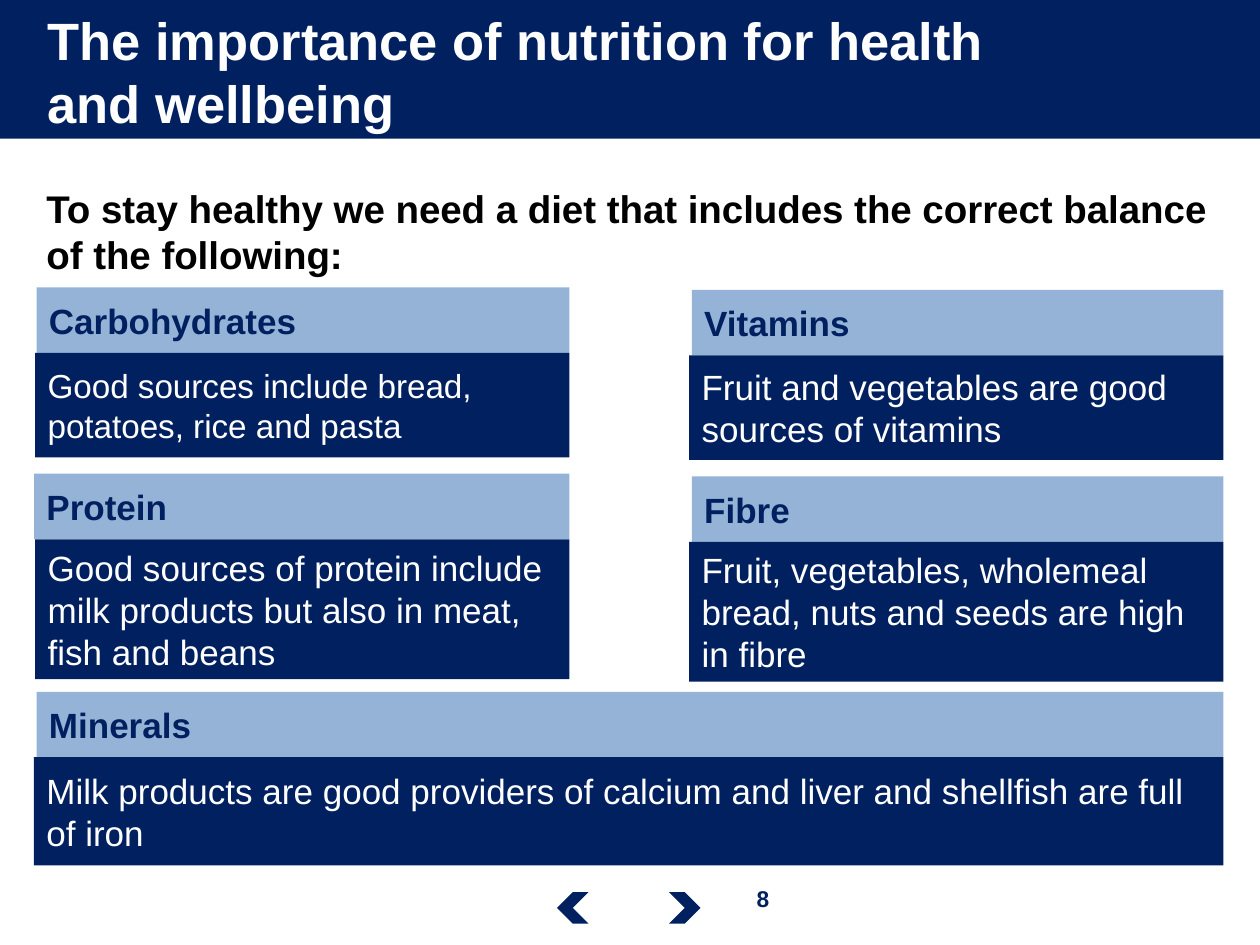
from dataclasses import dataclass

from pptx import Presentation
from pptx.dml.color import RGBColor
from pptx.enum.shapes import MSO_SHAPE
from pptx.enum.text import MSO_ANCHOR, PP_ALIGN
from pptx.util import Inches, Pt

RECTANGLE, CHEVRON = MSO_SHAPE.RECTANGLE, MSO_SHAPE.CHEVRON
TOP, MIDDLE = MSO_ANCHOR.TOP, MSO_ANCHOR.MIDDLE
LEFT, CENTER = PP_ALIGN.LEFT, PP_ALIGN.CENTER

NAVY = RGBColor(0x00, 0x20, 0x60)
LIGHT_BLUE = RGBColor(0x95, 0xB3, 0xD7)
WHITE = RGBColor(0xFF, 0xFF, 0xFF)
BLACK = RGBColor(0x00, 0x00, 0x00)

FONT = "Arial"
HEADING_HEIGHT = 0.52
LEFT_COLUMN_END, RIGHT_COLUMN_END = 4.52, 9.71


@dataclass(frozen=True)
class Box:
    left: float
    top: float
    width: float
    height: float

    def lengths(self) -> tuple:
        return tuple(Inches(v) for v in (self.left, self.top, self.width, self.height))


@dataclass(frozen=True)
class Nutrient:
    name: str
    sources: str
    heading_left: float
    sources_left: float
    right: float
    top: float
    sources_height: float
    sources_size: int = 20


NUTRIENTS = [
    Nutrient("Carbohydrates", "Good sources include bread, potatoes, rice and pasta",
             0.29, 0.28, LEFT_COLUMN_END, 2.28, 0.83, 19),
    Nutrient("Vitamins", "Fruit and vegetables are good sources of vitamins",
             5.49, 5.47, RIGHT_COLUMN_END, 2.3, 0.83),
    Nutrient("Protein",
             "Good sources of protein include milk products but also in meat, fish and beans",
             0.27, 0.28, LEFT_COLUMN_END, 3.76, 1.11),
    Nutrient("Fibre", "Fruit, vegetables, wholemeal bread, nuts and seeds are high in fibre",
             5.49, 5.47, RIGHT_COLUMN_END, 3.78, 1.11),
    Nutrient("Minerals",
             "Milk products are good providers of calcium and liver and shellfish are full of iron",
             0.29, 0.27, RIGHT_COLUMN_END, 5.49, 0.86),
]


def write(shape, text: str, size: int, color: RGBColor, bold: bool = False,
          align=LEFT, anchor=MIDDLE) -> None:
    frame = shape.text_frame
    frame.text = text
    frame.word_wrap = True
    frame.vertical_anchor = anchor
    for paragraph in frame.paragraphs:
        paragraph.alignment = align
        for run in paragraph.runs:
            run.font.name = FONT
            run.font.size = Pt(size)
            run.font.bold = bold
            run.font.color.rgb = color


def add_filled(slide, kind, box: Box, color: RGBColor):
    shape = slide.shapes.add_shape(kind, *box.lengths())
    shape.shadow.inherit = False
    shape.fill.solid()
    shape.fill.fore_color.rgb = color
    shape.line.fill.background()
    return shape


def add_nutrient(slide, item: Nutrient) -> None:
    heading = add_filled(slide, RECTANGLE, Box(
        item.heading_left, item.top, item.right - item.heading_left, HEADING_HEIGHT), LIGHT_BLUE)
    write(heading, item.name, 20, NAVY, bold=True)
    sources = add_filled(slide, RECTANGLE, Box(
        item.sources_left, item.top + HEADING_HEIGHT,
        item.right - item.sources_left, item.sources_height), NAVY)
    write(sources, item.sources, item.sources_size, WHITE)


def main() -> None:
    deck = Presentation()
    deck.slide_width, deck.slide_height = Inches(10), Inches(7.5)
    slide = deck.slides.add_slide(deck.slide_layouts[6])

    # Title band
    add_filled(slide, RECTANGLE, Box(0, 0, 10, 1.1), NAVY)
    title = slide.shapes.add_textbox(*Box(0.28, 0.06, 9.46, 1.01).lengths())
    write(title, "The importance of nutrition for health\vand wellbeing", 30, WHITE, bold=True)

    # Page number and navigation arrows
    page_number = slide.shapes.add_textbox(*Box(5.7, 6.97, 0.71, 0.32).lengths())
    write(page_number, "8", 13, NAVY, bold=True, align=CENTER, anchor=TOP)
    add_filled(slide, CHEVRON, Box(5.31, 7.08, 0.25, 0.25), NAVY)
    back_arrow = add_filled(slide, CHEVRON, Box(4.42, 7.08, 0.25, 0.25), NAVY)
    back_arrow.rotation = 180

    # Introduction
    introduction = slide.shapes.add_textbox(*Box(0.27, 1.42, 9.46, 0.9).lengths())
    write(introduction,
          "To stay healthy we need a diet that includes the correct balance of the following:",
          22, BLACK, bold=True, anchor=TOP)

    # Nutrient cards
    for nutrient in NUTRIENTS:
        add_nutrient(slide, nutrient)

    deck.save("out.pptx")


if __name__ == "__main__":
    main()
